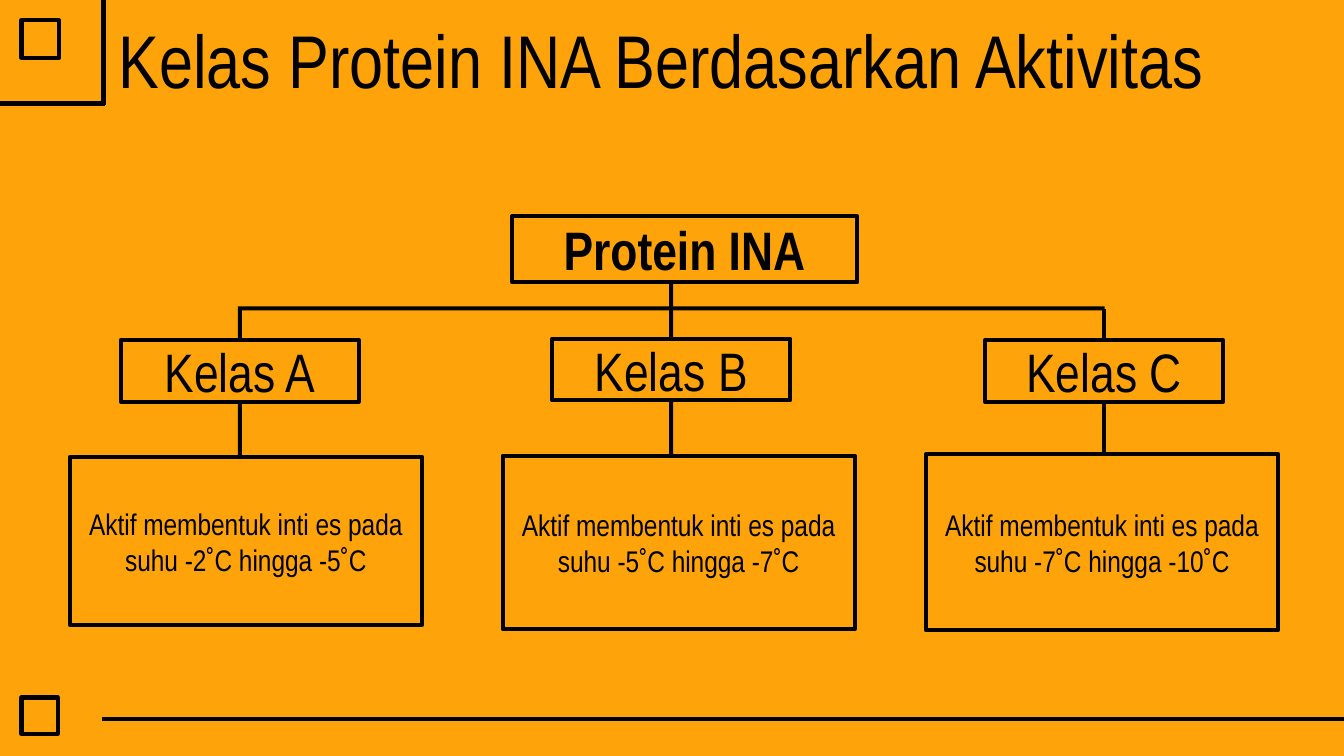
from pptx import Presentation, util as u
from pptx.dml.color import RGBColor
from pptx.enum import shapes, text
from pptx.oxml.ns import qn
from lxml import etree

PX = 9144
FONT = "Arial Narrow"
COLORS = {"orange": "FEA30A", "ink": "000000"}
STEM = 3


def px(*values):
    return [u.Emu(v * PX) for v in values]


def color(name):
    return RGBColor.from_string(COLORS[name])


def add_run(p, words, size, bold=False):
    r = p.add_run()
    r.text = words
    r.font.name = FONT
    r.font.size = u.Pt(size)
    r.font.bold = bold
    r.font.color.rgb = color("ink")


def add_rect(s, x, y, w, h, fill=None, outlined=True):
    sp = s.shapes.add_shape(shapes.MSO_SHAPE.RECTANGLE, *px(x, y, w, h))
    sp.shadow.inherit = False
    if fill:
        sp.fill.solid()
        sp.fill.fore_color.rgb = color(fill)
    else:
        sp.fill.background()
    if outlined:
        sp.line.color.rgb = color("ink")
        sp.line.width = u.Pt(2.25)
    else:
        sp.line.fill.background()
    return sp


def add_bar(s, x, y, w, h):
    add_rect(s, x, y, w, h, "ink", False)


def add_line(s, x1, y1, x2, y2):
    c = s.shapes.add_connector(shapes.MSO_CONNECTOR.STRAIGHT, *px(x1, y1, x2, y2))
    c.line.color.rgb = color("ink")
    c.line.width = u.Pt(2.25)
    etree.SubElement(c._element.spPr, qn("a:effectLst"))


def add_box(s, box, words, size, bold=False, fill="orange", inset=0):
    tf = add_rect(s, *box, fill).text_frame
    tf.word_wrap = True
    tf.vertical_anchor = text.MSO_ANCHOR.MIDDLE
    tf.margin_left = tf.margin_right = tf.margin_bottom = 0
    tf.margin_top = px(inset)[0]
    p = tf.paragraphs[0]
    p.alignment = text.PP_ALIGN.CENTER
    add_run(p, words, size, bold)


def add_frame(s, w, h):
    corner = 77
    add_line(s, 0, corner, corner + 1, corner)
    add_line(s, corner, corner + 1, corner, 0)
    add_rect(s, 16, 15, 28, 28)
    add_line(s, w, h - 27, 76, h - 27)
    add_rect(s, 16, h - 43, 27, 27)


def add_title(s, x, y, w, h, words):
    sp = s.shapes.title
    sp.left, sp.top, sp.width, sp.height = px(x, y, w, h)
    tf = sp.text_frame
    tf.auto_size = text.MSO_AUTO_SIZE.NONE
    tf.word_wrap = True
    tf.vertical_anchor = text.MSO_ANCHOR.TOP
    tf.margin_left = tf.margin_right = tf.margin_top = tf.margin_bottom = px(10)[0]
    p = tf.paragraphs[0]
    p.alignment = text.PP_ALIGN.LEFT
    add_run(p, words, 40)


def add_root(s, x, y, w, h):
    add_box(s, (x, y, w, h), "Protein INA", 29, True, None)
    add_bar(s, 498, y + h, STEM, 19)
    add_bar(s, 177, 228, 645, STEM)


def add_class(s, x, y, name, span, detail):
    w, h = 177, 46
    add_bar(s, x + w // 2 - 1, y - 23, STEM, 231)
    add_box(s, (x, y, w, h), f"Kelas {name}", 29)
    add_box(s, detail, f"Aktif membentuk inti es pada suhu {span}", 16, inset=1)


CLASSES = [
    (90, 253, "A", "-2˚C hingga -5˚C", (52, 340, 262, 125)),
    (411, 252, "B", "-5˚C hingga -7˚C", (374, 339, 262, 129)),
    (733, 253, "C", "-7˚C hingga -10˚C", (689, 338, 262, 131)),
]


def main():
    prs = Presentation()
    prs.slide_width = px(1000)[0]
    prs.slide_height = prs.slide_width * 9 // 16
    s = prs.slides.add_slide(prs.slide_layouts[5])
    s.background.fill.solid()
    s.background.fill.fore_color.rgb = color("orange")
    add_frame(s, 1000, 562)
    add_title(s, 78, 0, 844, 67, "Kelas Protein INA Berdasarkan Aktivitas")
    add_root(s, 381, 161, 257, 49)
    for item in CLASSES:
        add_class(s, *item)
    prs.save("out.pptx")


if __name__ == "__main__":
    main()
